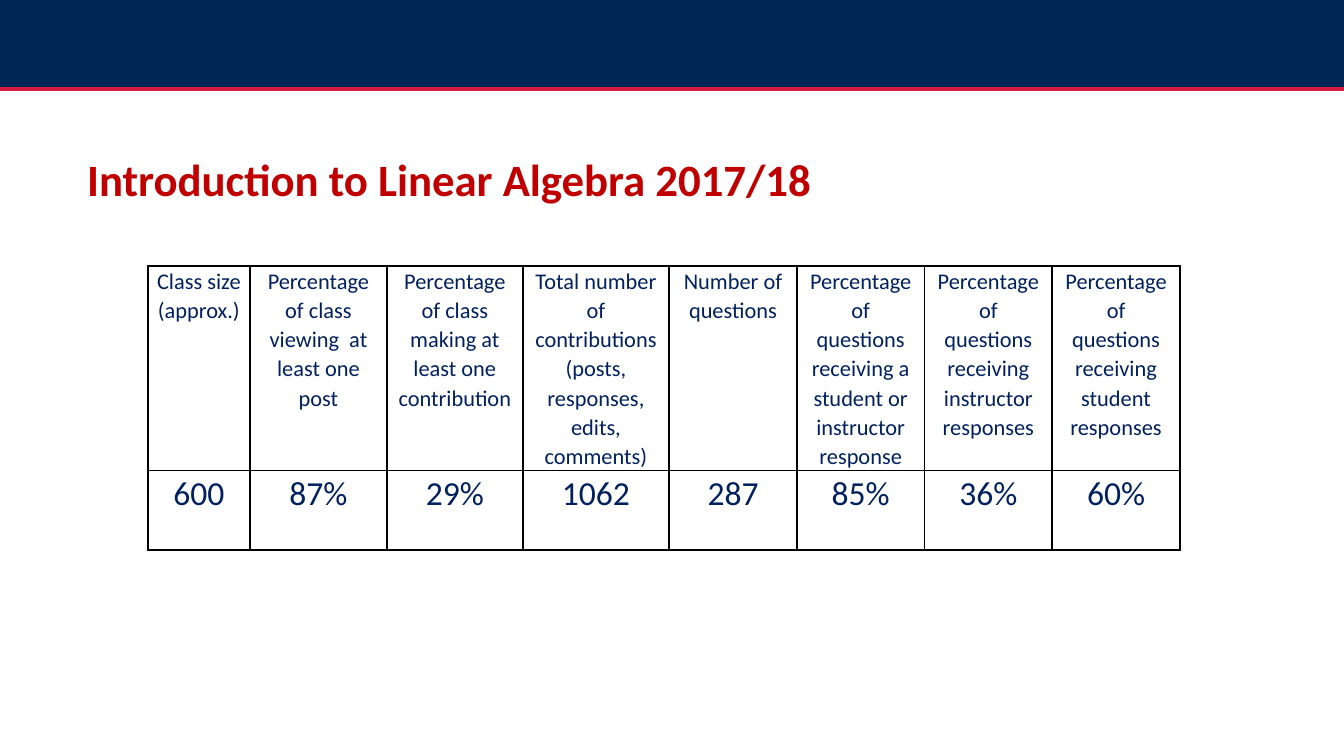
from lxml import etree
from pptx import Presentation
from pptx.dml.color import RGBColor
from pptx.enum.shapes import MSO_SHAPE
from pptx.enum.text import MSO_AUTO_SIZE, PP_ALIGN
from pptx.oxml.ns import qn
from pptx.util import Inches, Pt

FONT = "Calibri"
NAVY, RED, TEXT_BLUE, TITLE_RED = "002654", "D81C3F", "002060", "C00000"
BLACK = "000000"
LINE_SPACING = 1.07

COLUMNS = [  # width, heading, value
    (0.76, "Class size (approx.)", "600"),
    (1.02, "Percentage of class viewing  at least one post", "87%"),
    (1.01, "Percentage of class making at least one contribution", "29%"),
    (1.09, "Total number of contributions (posts, responses, edits, comments)",
     "1062"),
    (0.95, "Number of questions", "287"),
    (0.95, "Percentage of questions receiving a student or instructor response",
     "85%"),
    (0.95, "Percentage of questions receiving instructor responses", "36%"),
    (0.95, "Percentage of questions receiving student responses", "60%"),
]


def color(value):
    return RGBColor.from_string(value)


def style_paragraph(para, size, tone, bold=False, align=PP_ALIGN.LEFT):
    para.alignment = align
    para.line_spacing = LINE_SPACING
    para.font.name = FONT
    para.font.size = Pt(size)
    para.font.bold = bold
    para.font.color.rgb = color(tone)


def add_banner(page, left, top, width, height):
    banner = page.shapes.add_shape(
        MSO_SHAPE.RECTANGLE,
        Inches(left), Inches(top), Inches(width), Inches(height))
    banner.shadow.inherit = False
    banner.fill.solid()
    banner.fill.fore_color.rgb = color(NAVY)
    banner.line.color.rgb = color(RED)
    banner.line.width = Pt(2)


def add_title(page, left, top, width, height, text):
    box = page.shapes.add_textbox(
        Inches(left), Inches(top), Inches(width), Inches(height))
    frame = box.text_frame
    frame.word_wrap = False
    frame.auto_size = MSO_AUTO_SIZE.SHAPE_TO_FIT_TEXT
    frame.text = text
    style_paragraph(frame.paragraphs[0], 24, TITLE_RED, bold=True)


def set_borders(cell, tone, points):
    properties = cell._tc.get_or_add_tcPr()
    for side in ("lnL", "lnR", "lnT", "lnB"):
        line = etree.SubElement(properties, qn(f"a:{side}"), w=str(Pt(points)))
        fill = etree.SubElement(line, qn("a:solidFill"))
        etree.SubElement(fill, qn("a:srgbClr"), val=tone)


def fill_cell(cell, text, size, margin):
    set_borders(cell, BLACK, 1)
    cell.fill.background()
    cell.margin_left = cell.margin_right = Inches(margin)
    cell.margin_top = cell.margin_bottom = 0
    cell.text = text
    style_paragraph(cell.text_frame.paragraphs[0], size, TEXT_BLUE,
                    align=PP_ALIGN.CENTER)


def add_results_table(page, left, top, heights):
    width = sum(column[0] for column in COLUMNS)
    table = page.shapes.add_table(
        len(heights), len(COLUMNS), Inches(left), Inches(top),
        Inches(width), Inches(sum(heights))).table
    table.first_row = table.horz_banding = False
    for row, height in zip(table.rows, heights):
        row.height = Inches(height)
    for index, (column_width, heading, value) in enumerate(COLUMNS):
        table.columns[index].width = Inches(column_width)
        fill_cell(table.cell(0, index), heading, 12, 0.06)
        fill_cell(table.cell(1, index), value, 18, 0.07)


def main():
    deck = Presentation()
    # Widescreen 16:9
    deck.slide_width = Inches(10)
    deck.slide_height = deck.slide_width * 9 // 16
    page = deck.slides.add_slide(deck.slide_layouts[6])

    # Top banner, bleeding over the slide edges
    add_banner(page, -0.12, -0.06, 10.32, 0.72)
    # Results table; the heading row grows to fit its text
    add_results_table(page, 1.1, 1.98, (1.15, 0.59))
    # Slide title
    add_title(page, 0.55, 1.05, 5.66, 0.51,
              "Introduction to Linear Algebra 2017/18")

    deck.save("out.pptx")


if __name__ == "__main__":
    main()
